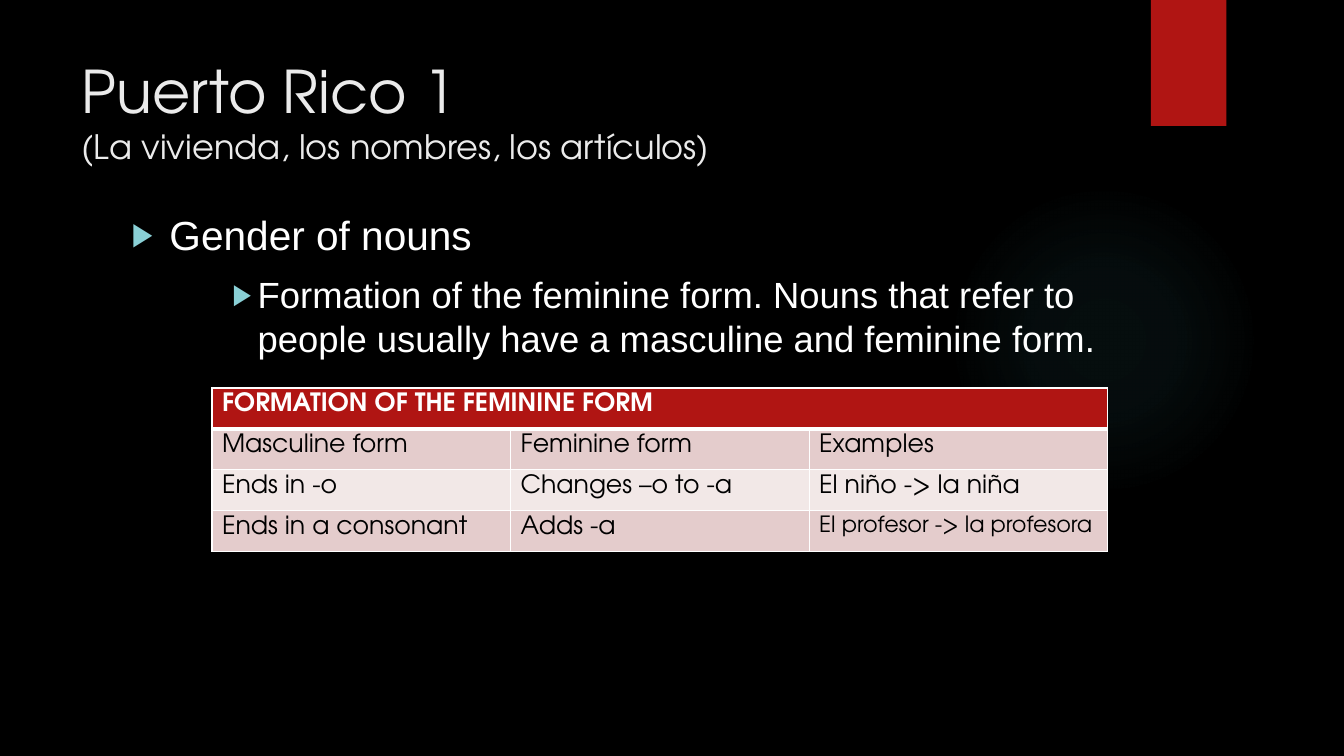
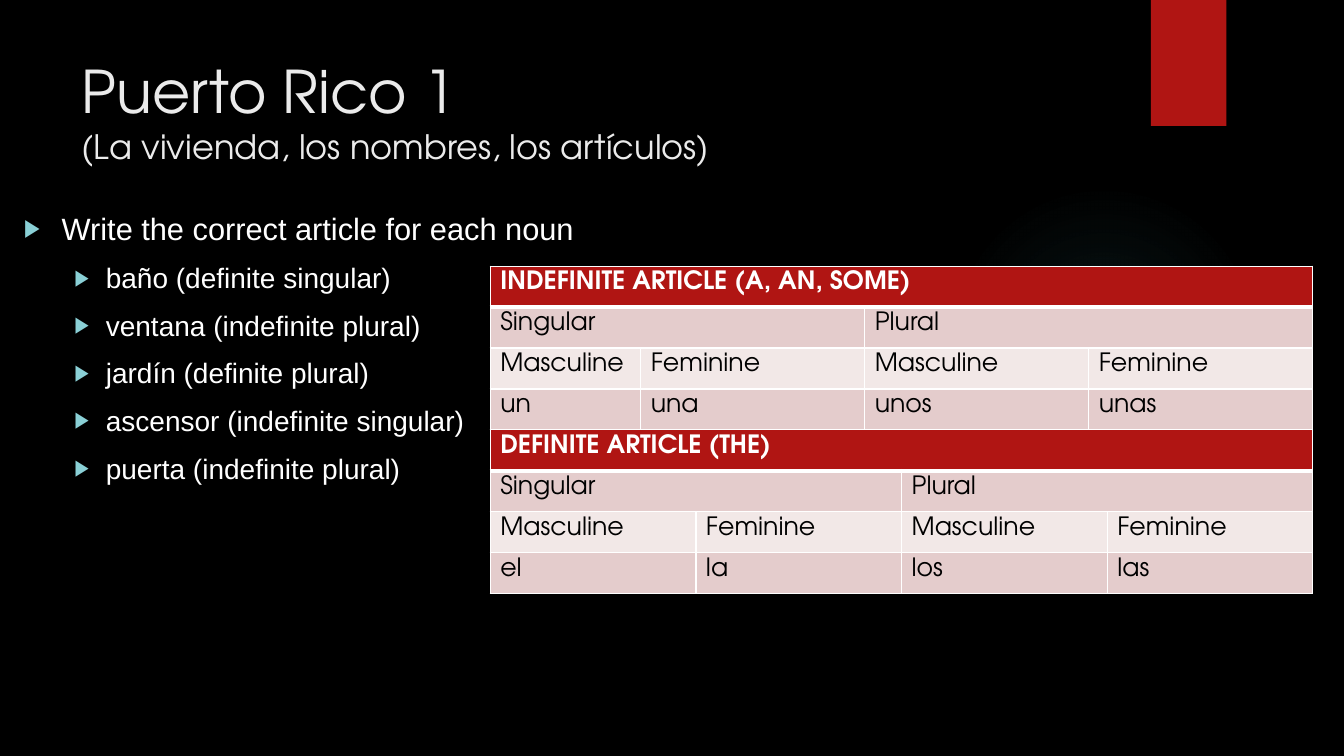
"""Build two Spanish grammar slides with bullet lists and article tables."""
from dataclasses import dataclass

from lxml.etree import SubElement
from pptx import Presentation
from pptx.dml.color import RGBColor
from pptx.enum.shapes import MSO_SHAPE
from pptx.enum.text import MSO_ANCHOR, MSO_AUTO_SIZE, PP_ALIGN
from pptx.oxml import parse_xml
from pptx.oxml.ns import nsdecls, qn
from pptx.util import Pt


@dataclass(frozen=True)
class Theme:
    """Colours, fonts and type sizes of the deck."""
    background: str = "000000"
    red: str = "B01513"
    glow: str = "50B9C1"
    bullet: str = "8AD0D6"
    title: str = "EBEBEB"
    light: str = "FFFFFF"
    dark: str = "000000"
    bands: tuple = ("E4CCCC", "F2E8E7")
    heading_font: str = "TeX Gyre Adventor"
    body_font: str = "Arial"
    title_size: int = 42
    subtitle_size: int = 24
    cell_size: int = 18
    small_cell_size: int = 16


THEME = Theme()
TITLE = "Puerto Rico 1"
SUBTITLE = "(La vivienda, los nombres, los artículos)"
ROW_HEIGHT = 29.2
LIST_TOP, LIST_WIDTH, LIST_HEIGHT = 146.2, 704, 346
INDENTS = [(27, -27), (58.5, -22.5), (90, -18)]
GENDERS = ["Masculine", "Feminine"] * 2
NUMBERS = ["Singular", "Plural"]

SLIDES = [
    {
        "list_left": 87,
        "bullets": [
            (0, 29, "Gender of nouns"),
            (2, 26, "Formation of the feminine form. Nouns that refer to people "
                    "usually have a masculine and feminine form."),
        ],
        "tables": [{
            "at": (151.4, 277.2),
            "columns": [213.3] * 3,
            "small": "El profesor -> la profesora",
            "rows": [
                ["FORMATION OF THE FEMININE FORM"],
                ["Masculine form", "Feminine form", "Examples"],
                ["Ends in -o", "Changes –o to -a", "El niño -> la niña"],
                ["Ends in a consonant", "Adds -a", "El profesor -> la profesora"],
            ],
        }],
    },
    {
        "list_left": 10,
        "bullets": [
            (0, 22, "Write the correct article for each noun"),
            (1, 20, "baño (definite singular)"),
            (1, 20, "ventana (indefinite plural)"),
            (1, 20, "jardín (definite plural)"),
            (1, 20, "ascensor (indefinite singular)"),
            (1, 20, "puerta (indefinite plural)"),
        ],
        "tables": [
            {
                "at": (350.2, 190.2),
                "columns": [107.5, 160, 160, 160],
                "rows": [["INDEFINITE ARTICLE (A, AN, SOME)"], NUMBERS, GENDERS,
                         ["un", "una", "unos", "unas"]],
            },
            {
                "at": (350.2, 190.2 + 4 * ROW_HEIGHT),
                "columns": [146.9] * 4,
                "rows": [["DEFINITE ARTICLE (THE)"], NUMBERS, GENDERS,
                         ["el", "la", "los", "las"]],
            },
        ],
    },
]


def rgb(value):
    return RGBColor.from_string(value)


def style_font(font, name, size, color, bold=False):
    font.name, font.size, font.bold = name, Pt(size), bold
    font.color.rgb = rgb(color)


def add_plain_shape(slide, kind, box, color):
    shape = slide.shapes.add_shape(kind, *map(Pt, box))
    shape.shadow.inherit = False
    shape.fill.solid()
    shape.fill.fore_color.rgb = rgb(color)
    shape.line.fill.background()
    slide.shapes.title.element.addprevious(shape.element)
    return shape


def add_decor(slide):
    glow = add_plain_shape(slide, MSO_SHAPE.OVAL, (677.5, 131.8, 221.8, 221.8), THEME.glow)
    stops = "".join(
        f'<a:gs pos="{place * 1000}"><a:srgbClr val="{THEME.glow}">'
        f'<a:alpha val="{alpha * 1000}"/></a:srgbClr></a:gs>'
        for place, alpha in ((0, 7), (36, 6), (69, 0), (100, 0)))
    gradient = parse_xml(
        f'<a:gradFill {nsdecls("a")} rotWithShape="1"><a:gsLst>{stops}</a:gsLst>'
        '<a:path path="circle"><a:fillToRect l="50000" t="50000" r="50000" b="50000"/>'
        '</a:path></a:gradFill>')
    properties = glow.element.spPr
    properties.replace(properties.find(qn("a:solidFill")), gradient)
    add_plain_shape(slide, MSO_SHAPE.RECTANGLE, (822, 0, 54, 90), THEME.red)


def fill_title(slide):
    title = slide.shapes.title
    title.left, title.top, title.width, title.height = map(Pt, (51, 36, 741, 110))
    frame = title.text_frame
    frame.auto_size, frame.word_wrap = MSO_AUTO_SIZE.NONE, True
    frame.vertical_anchor, frame.margin_top = MSO_ANCHOR.TOP, Pt(3.2)
    heading = frame.paragraphs[0]
    heading.alignment = PP_ALIGN.LEFT
    style_font(heading.font, THEME.heading_font, THEME.title_size, THEME.title)
    heading.add_run().text = TITLE
    heading.add_line_break()
    subtitle = heading.add_run()
    subtitle.text = SUBTITLE
    subtitle.font.size = Pt(THEME.subtitle_size)


def add_bullets(slide, left, bullets):
    box = (left, LIST_TOP, LIST_WIDTH, LIST_HEIGHT)
    frame = slide.shapes.add_textbox(*map(Pt, box)).text_frame
    frame.word_wrap = True
    for index, (level, size, text) in enumerate(bullets):
        item = frame.add_paragraph() if index else frame.paragraphs[0]
        item.text, item.level = text, level
        properties = item._p.get_or_add_pPr()
        margin, indent = INDENTS[level]
        properties.set("marL", str(Pt(margin)))
        properties.set("indent", str(Pt(indent)))
        color = SubElement(properties, qn("a:buClr"))
        SubElement(color, qn("a:srgbClr"), val=THEME.bullet)
        SubElement(properties, qn("a:buSzPct"), val="80000")
        SubElement(properties, qn("a:buFont"), typeface=THEME.body_font)
        SubElement(properties, qn("a:buChar"), char="▶")
        item.space_before = Pt(10 if index else 0)
        style_font(item.font, THEME.body_font, size, THEME.light)


def set_borders(cell, row):
    properties = cell._tc.get_or_add_tcPr()
    widths = {"L": 1, "R": 1, "T": 3 if row == 1 else 1, "B": 3 if row == 0 else 1}
    for place, (side, width) in enumerate(widths.items()):
        properties.insert(place, parse_xml(
            f'<a:ln{side} {nsdecls("a")} w="{Pt(width)}"><a:solidFill>'
            f'<a:srgbClr val="{THEME.light}"/></a:solidFill></a:ln{side}>'))


def add_grid(slide, at, columns, rows, small=None):
    box = (*at, sum(columns), ROW_HEIGHT * len(rows))
    grid = slide.shapes.add_table(len(rows), len(columns), *map(Pt, box)).table
    grid.first_row = grid.horz_banding = False
    for column, width in zip(grid.columns, columns):
        column.width = Pt(width)
    for row, texts in enumerate(rows):
        grid.rows[row].height = Pt(ROW_HEIGHT)
        header = row == 0
        span = len(columns) // len(texts)
        for column in range(len(columns)):
            cell = grid.cell(row, column)
            cell.vertical_anchor = MSO_ANCHOR.TOP
            cell.margin_top = cell.margin_bottom = Pt(3.6)
            cell.fill.solid()
            cell.fill.fore_color.rgb = rgb(THEME.red if header else THEME.bands[(row - 1) % 2])
            set_borders(cell, row)
            if column % span:
                continue
            if span > 1:
                cell.merge(grid.cell(row, column + span - 1))
            cell.text = texts[column // span]
            size = THEME.small_cell_size if cell.text == small else THEME.cell_size
            style_font(cell.text_frame.paragraphs[0].font, THEME.heading_font, size,
                       THEME.light if header else THEME.dark, header)


def main():
    deck = Presentation()
    deck.slide_width, deck.slide_height = Pt(960), Pt(540)
    backdrop = deck.slide_master.background.fill
    backdrop.solid()
    backdrop.fore_color.rgb = rgb(THEME.background)
    for content in SLIDES:
        slide = deck.slides.add_slide(deck.slide_layouts[5])
        add_decor(slide)
        fill_title(slide)
        add_bullets(slide, content["list_left"], content["bullets"])
        for table in content["tables"]:
            add_grid(slide, **table)
    deck.save("out.pptx")


if __name__ == "__main__":
    main()
